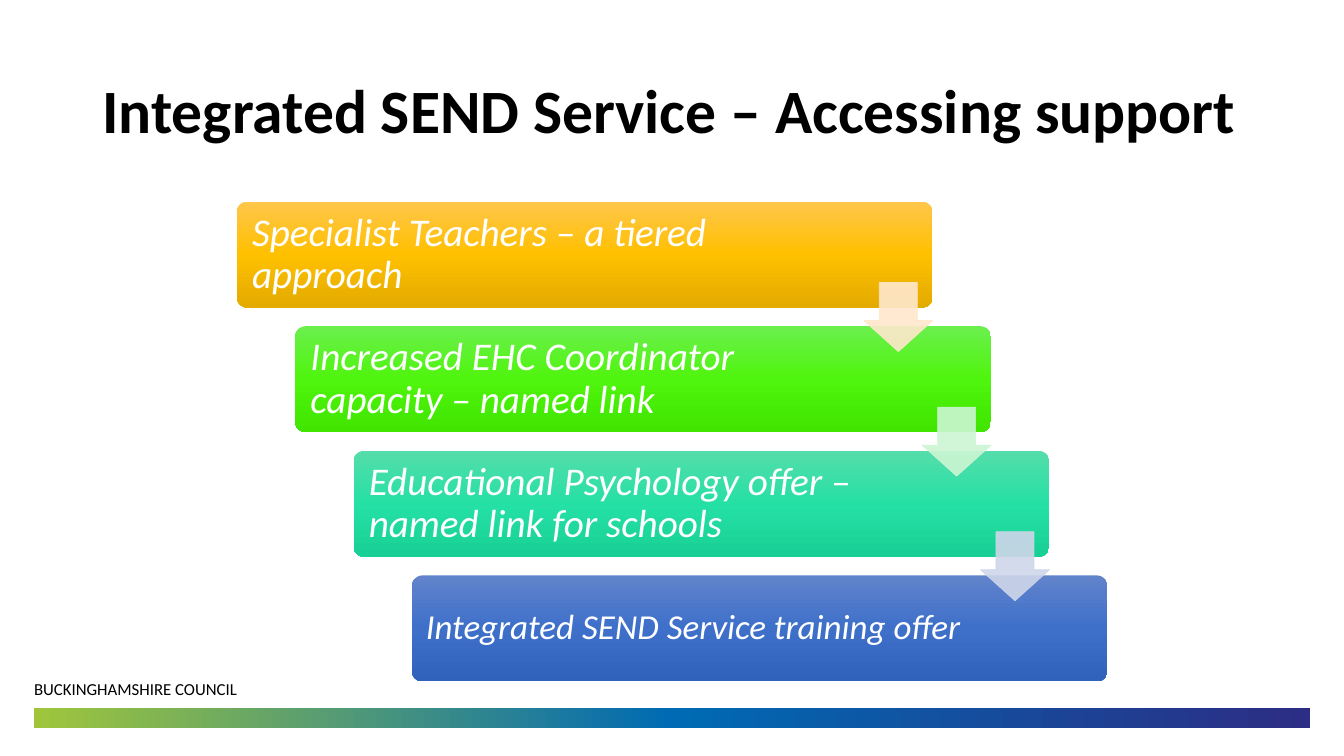
"""Build the slide on ways to get support."""
import pptx
import pptx.dml.color
import pptx.enum.shapes
import pptx.enum.text
import pptx.oxml
import pptx.oxml.ns
import pptx.util

Cm = pptx.util.Cm
Pt = pptx.util.Pt
KIND = pptx.enum.shapes.MSO_SHAPE
ANCHOR = pptx.enum.text.MSO_ANCHOR

STEPS = [
    ("Specialist Teachers – a tiered approach", 28, ["FFC64B", "FFC000", "E3AB00"]),
    ("Increased EHC Coordinator capacity – named link", 28, ["6BEF4D", "4FF50D", "41E500"]),
    ("Educational Psychology offer – named link for schools", 28, ["55DDAB", "25E0A4", "18D095"]),
    ("Integrated SEND Service training offer", 25, ["6183CB", "3E70CA", "3062BB"]),
]
ARROWS = ["FFE8CC", "CCF6D3", "CFD6EA"]


def color(code):
    """Turn a hex string into a colour."""
    return pptx.dml.color.RGBColor.from_string(code)


def place(shape, left, top, width, height):
    """Move and size a shape, in centimetres."""
    shape.left, shape.top = Cm(left), Cm(top)
    shape.width, shape.height = Cm(width), Cm(height)


def write(shape, text, size, code="000000", bold=False, italic=False,
          inset=0.25, anchor=ANCHOR.MIDDLE, line=0.9):
    """Put formatted text in a shape."""
    frame = shape.text_frame
    frame.word_wrap = True
    frame.auto_size = pptx.enum.text.MSO_AUTO_SIZE.NONE
    frame.vertical_anchor = anchor
    frame.margin_left = frame.margin_right = Cm(inset)
    frame.margin_top = frame.margin_bottom = Cm(inset / 2 if inset == 0.25 else inset)
    para = frame.paragraphs[0]
    para.alignment = pptx.enum.text.PP_ALIGN.LEFT
    para.line_spacing = line
    run = para.add_run()
    run.text = text
    font = run.font
    font.name, font.size = "Calibri", Pt(size)
    font.bold, font.italic = bold, italic
    font.color.rgb = color(code)


def label(slide, box, text, size, **style):
    """Add a text box."""
    shape = slide.shapes.add_textbox(*map(Cm, box))
    write(shape, text, size, **style)


def block(slide, kind, box, codes, angle):
    """Add a shape with an even gradient and no outline."""
    shape = slide.shapes.add_shape(kind, *map(Cm, box))
    shape.shadow.inherit = False
    shape.line.fill.background()
    shape.fill.gradient()
    shape.fill.gradient_angle = angle
    stops = shape._element.spPr.find(".//" + pptx.oxml.ns.qn("a:gsLst"))
    for stop in list(stops):
        stops.remove(stop)
    for rank, code in enumerate(codes):
        spot = 100000 * rank // (len(codes) - 1)
        stops.append(pptx.oxml.parse_xml(
            f'<a:gs {pptx.oxml.ns.nsdecls("a")} pos="{spot}"><a:srgbClr val="{code}"/></a:gs>'))
    return shape


def arrow(slide, left, top, code):
    """Add a slightly clear down arrow."""
    shape = slide.shapes.add_shape(KIND.DOWN_ARROW, Cm(left), Cm(top), Cm(1.74), Cm(1.74))
    shape.shadow.inherit = False
    shape.adjustments[0], shape.adjustments[1] = 0.55, 0.45
    shape.fill.solid()
    shape.fill.fore_color.rgb = color(code)
    shape.line.color.rgb = color(code)
    shape.line.width = Pt(0.5)
    for tint in shape._element.spPr.iter(pptx.oxml.ns.qn("a:srgbClr")):
        tint.append(pptx.oxml.parse_xml(f'<a:alpha {pptx.oxml.ns.nsdecls("a")} val="90000"/>'))


def main():
    """Build and save the slide."""
    deck = pptx.Presentation()
    deck.slide_width, deck.slide_height = Cm(33.87), Cm(19.05)
    slide = deck.slides.add_slide(deck.slide_layouts[5])

    block(slide, KIND.RECTANGLE, (0.86, 17.83, 32.16, 0.51), ["9FC63B", "006AB4", "2C2D84"], 0)
    label(slide, (0.61, 16.97, 16.28, 0.76), "BUCKINGHAMSHIRE COUNCIL", 12,
          anchor=ANCHOR.TOP, line=1)
    title = slide.shapes.title
    place(title, 2.33, 1.01, 29.21, 3.68)
    write(title, "Integrated SEND Service – Accessing support", 44, bold=True)

    spots = [(5.97 + 1.47 * rank, 5.08 + 3.14 * rank) for rank in range(len(STEPS))]
    for (left, top), (text, size, codes) in zip(spots, STEPS):
        card = block(slide, KIND.ROUNDED_RECTANGLE, (left, top, 17.53, 2.67), codes, 270)
        card.adjustments[0] = 0.1
        label(slide, (left + 0.08, top + 0.08, 14.2, 2.51), text, size,
              code="FFFFFF", italic=True, inset=size / 92)
    for (left, top), code in zip(spots, ARROWS):
        arrow(slide, left + 15.8, top + 2.04, code)

    deck.save("out.pptx")


if __name__ == "__main__":
    main()
